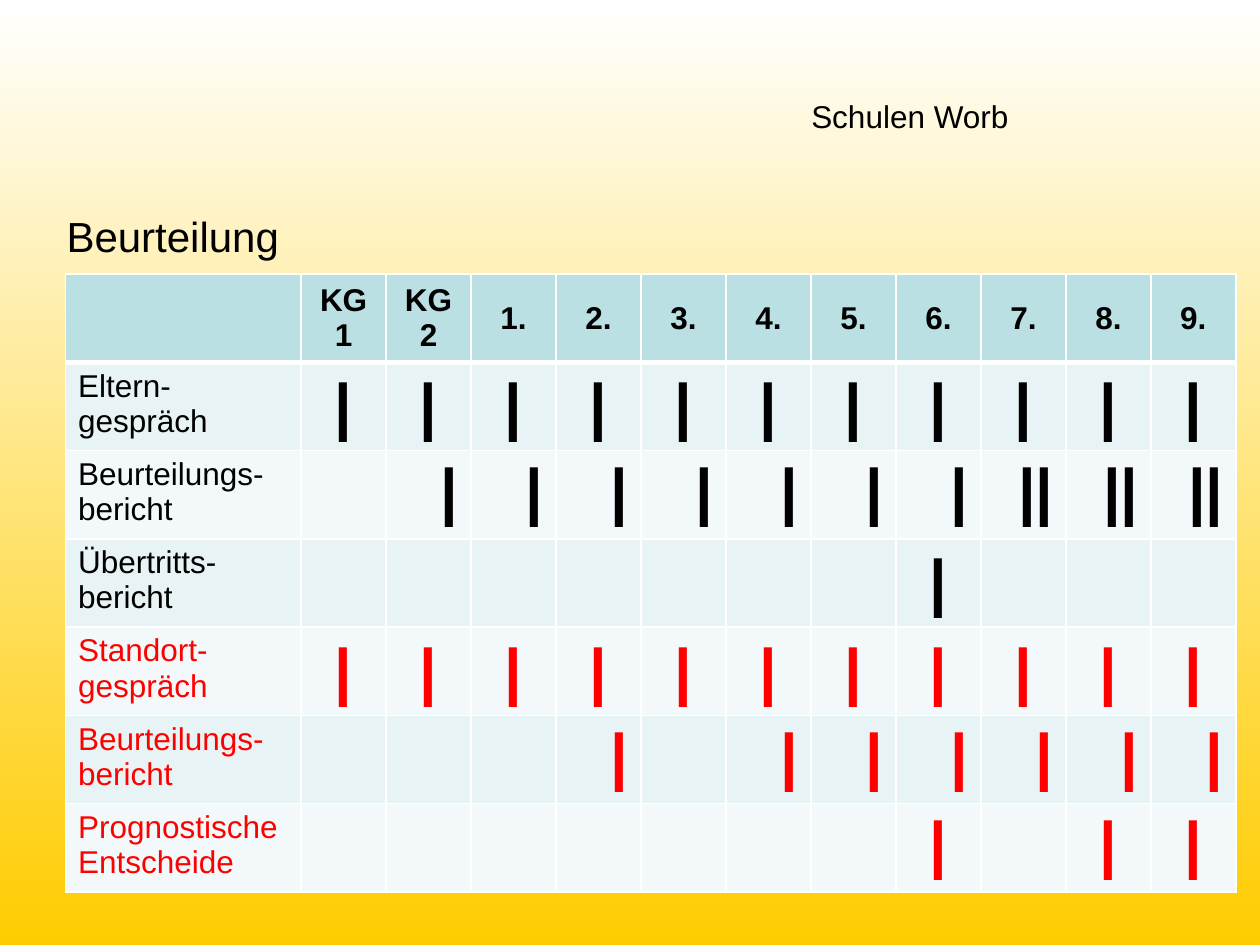
from dataclasses import dataclass

from lxml.etree import SubElement
from pptx import Presentation
from pptx.dml.color import RGBColor
from pptx.enum.text import MSO_ANCHOR, PP_ALIGN
from pptx.oxml.ns import qn
from pptx.util import Inches, Pt

COLORS = {
    "black": "000000",
    "red": "FF0000",
    "white": "FFFFFF",
    "gold": "FFCC00",
    "header": "BBE0E3",
    "odd": "E7F3F4",
    "even": "F3F9FA",
}
FONT = "Arial"
WIDTH, HEIGHT = Inches(10), Inches(7.5)
GRADES = ["KG1", "KG2"] + [f"{n}." for n in range(1, 10)]
TABLE_WIDTH, LABEL_WIDTH, ROW_HEIGHT = 9.29, 1.87, 0.7


@dataclass
class Report:
    """One kind of assessment with its number of marks per grade."""

    label: str
    counts: str
    color: str = "black"
    align: PP_ALIGN = PP_ALIGN.CENTER
    anchor: MSO_ANCHOR = MSO_ANCHOR.MIDDLE


RIGHT_TOP = {"align": PP_ALIGN.RIGHT, "anchor": MSO_ANCHOR.TOP}
REPORTS = [
    Report("Eltern-gespräch", "11111111111"),
    Report("Beurteilungs-bericht", "01111111222", **RIGHT_TOP),
    Report("Übertritts-bericht", "00000001000"),
    Report("Standort-gespräch", "11111111111", "red"),
    Report("Beurteilungs-bericht", "00010111111", "red", **RIGHT_TOP),
    Report("Prognostische Entscheide", "00000001011", "red", anchor=MSO_ANCHOR.TOP),
]


def rgb(name: str) -> RGBColor:
    """Look up a named colour."""
    return RGBColor.from_string(COLORS[name])


def write(tf, text: str, size: float, color: str = "black", bold: bool = False,
          align: PP_ALIGN = PP_ALIGN.LEFT) -> None:
    """Fill a text frame with one formatted paragraph."""
    tf.text = text
    p = tf.paragraphs[0]
    p.alignment = align
    for r in p.runs:
        r.font.name, r.font.size, r.font.bold = FONT, Pt(size), bold
        r.font.color.rgb = rgb(color)


def add_label(slide, text: str, size: float, box: tuple, wrap: bool) -> None:
    """Add a text box placed by shares of the slide's size."""
    x, y, w, h = box
    sp = slide.shapes.add_textbox(
        int(x * WIDTH), int(y * HEIGHT), int(w * WIDTH), int(h * HEIGHT))
    sp.text_frame.word_wrap = wrap
    write(sp.text_frame, text, size)


def style_cell(cell, fill: str, top: float = 1, bottom: float = 1) -> None:
    """Set a cell's fill and white borders."""
    cell.fill.solid()
    cell.fill.fore_color.rgb = rgb(fill)
    tc_pr = cell._tc.get_or_add_tcPr()
    for i, (side, width) in enumerate(
            {"lnL": 1, "lnR": 1, "lnT": top, "lnB": bottom}.items()):
        ln = SubElement(tc_pr, qn(f"a:{side}"), w=str(Pt(width)))
        SubElement(SubElement(ln, qn("a:solidFill")), qn("a:srgbClr"), val=COLORS["white"])
        tc_pr.insert(i, ln)


def add_grid(slide) -> None:
    """Add the table of assessments by grade."""
    rows, cols = len(REPORTS) + 1, len(GRADES) + 1
    frame = slide.shapes.add_table(
        rows, cols, int(0.052 * WIDTH), int(0.29 * HEIGHT),
        Inches(TABLE_WIDTH), Inches(rows * ROW_HEIGHT))
    table = frame.table
    for row in table.rows:
        row.height = Inches(ROW_HEIGHT)
    for i, col in enumerate(table.columns):
        col.width = Inches((TABLE_WIDTH - LABEL_WIDTH) / len(GRADES) if i else LABEL_WIDTH)

    for c, grade in enumerate([""] + GRADES):
        cell = table.cell(0, c)
        style_cell(cell, "header", bottom=3)
        cell.vertical_anchor = MSO_ANCHOR.MIDDLE
        write(cell.text_frame, grade, 18, bold=True, align=PP_ALIGN.CENTER)

    for r, report in enumerate(REPORTS, 1):
        for c in range(cols):
            style_cell(table.cell(r, c), "odd" if r % 2 else "even", top=3 if r == 1 else 1)
        write(table.cell(r, 0).text_frame, report.label, 18, report.color)
        for c, count in enumerate(report.counts, 1):
            if count != "0":
                cell = table.cell(r, c)
                cell.vertical_anchor = report.anchor
                write(cell.text_frame, "|" * int(count), 36, report.color, True, report.align)


def main() -> None:
    """Build the slide and save it."""
    prs = Presentation()
    prs.slide_width, prs.slide_height = WIDTH, HEIGHT
    slide = prs.slides.add_slide(prs.slide_layouts[6])
    fill = slide.background.fill
    fill.gradient()
    fill.gradient_angle = 270
    for stop, position, color in zip(fill.gradient_stops, (0, 1), ("white", "gold")):
        stop.position = position
        stop.color.rgb = rgb(color)
    add_label(slide, "Schulen Worb", 18, (0.634, 0.096, 0.189, 0.053), False)
    add_label(slide, "Beurteilung", 24, (0.043, 0.216, 0.937, 0.545), True)
    add_grid(slide)
    prs.save("out.pptx")


if __name__ == "__main__":
    main()
